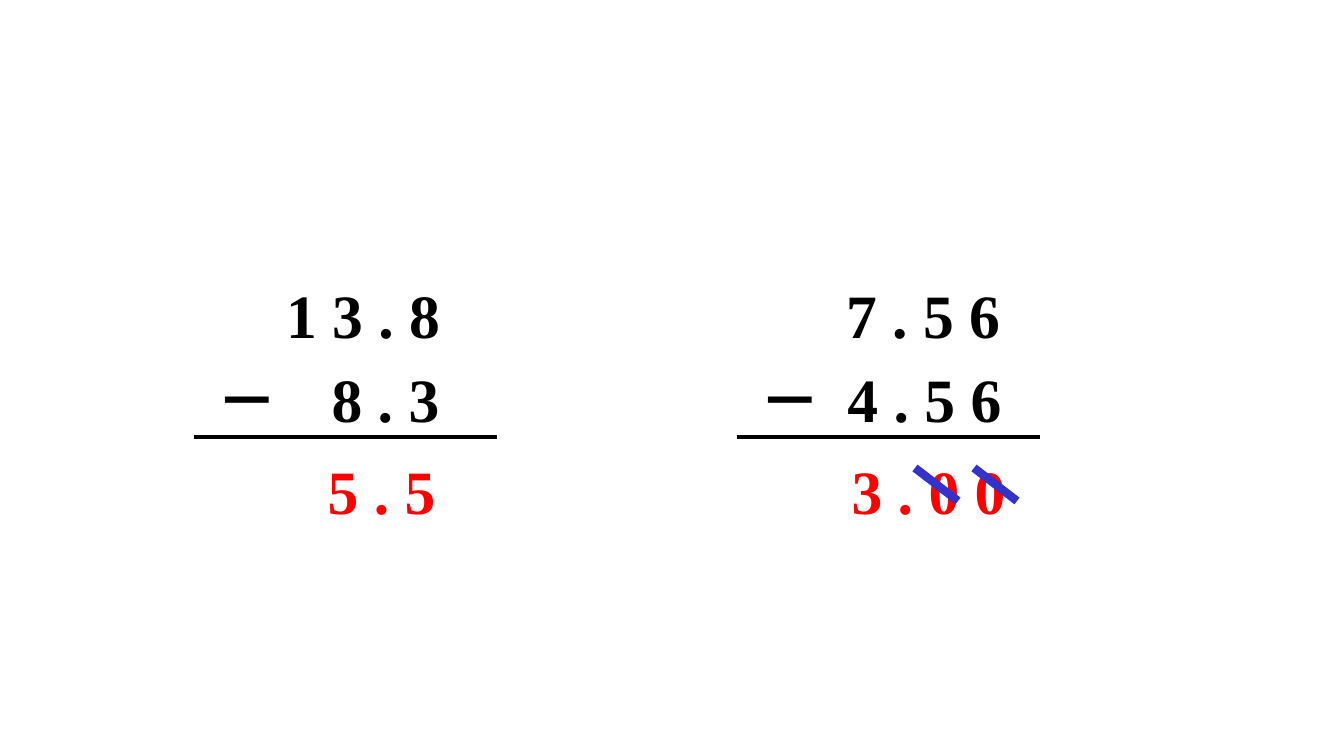
from lxml import etree
from pptx import Presentation
from pptx.dml.color import RGBColor
from pptx.enum.shapes import MSO_CONNECTOR
from pptx.enum.text import MSO_ANCHOR, PP_ALIGN
from pptx.oxml.ns import qn
from pptx.util import Emu, Pt

STRAIGHT = MSO_CONNECTOR.STRAIGHT
TOP = MSO_ANCHOR.TOP
CENTER = PP_ALIGN.CENTER

BLACK, RED, BLUE = "000000", "FF0000", "3333CC"
FONT = "Times New Roman"
ROW_HEIGHT = 89
RULE_WIDTH = 303


def px(length):
    return Emu(round(length * 914400 / 134.4))


def color(hex_value):
    return RGBColor.from_string(hex_value)


def add_number(slide, left, top, width, digits, ink=BLACK):
    number = slide.shapes.add_textbox(px(left), px(top), px(width), px(ROW_HEIGHT))
    frame = number.text_frame
    frame.word_wrap = True
    frame.vertical_anchor = TOP
    frame.margin_top = px(14)
    frame.margin_bottom = px(4)
    paragraph = frame.paragraphs[0]
    paragraph.alignment = CENTER
    run = paragraph.add_run()
    run.text = digits
    run.font.name = FONT
    run.font.size = Pt(33)
    run.font.bold = True
    run.font.color.rgb = color(ink)


def add_line(slide, left, top, width, height, ink, weight):
    line = slide.shapes.add_connector(
        STRAIGHT, px(left), px(top), px(left + width), px(top + height))
    line.line.color.rgb = color(ink)
    line.line.width = Pt(weight)
    etree.SubElement(line._element.spPr, qn("a:effectLst"))


def add_subtraction(slide, left, top, minuend, subtrahend, difference, strikes=()):
    rows = [
        (0, 188, minuend, BLACK),
        (84, 185, subtrahend, BLACK),
        (176, 261, difference, RED),
    ]
    for row_top, width, (offset, digits), ink in rows:
        add_number(slide, left + offset, top + row_top, width, digits, ink)
    add_number(slide, left - 39, top + 85, 185, "－")
    add_line(slide, left, top + 174, RULE_WIDTH, 0, BLACK, 2.25)
    for offset in strikes:
        add_line(slide, left + offset, top + 205, 43, 33, BLUE, 4.5)


def main():
    deck = Presentation()
    deck.slide_width = px(1344)
    deck.slide_height = px(756)
    slide = deck.slides.add_slide(deck.slide_layouts[6])
    add_subtraction(slide, 194, 263, (75, "1 3 . 8"), (99, "8 . 3"), (57, "5 . 5"))
    add_subtraction(slide, 737, 263, (92, "7 . 5 6"), (95, "4 . 5 6"),
                    (61, "3 . 0 0"), strikes=(178, 237))
    deck.save("out.pptx")


if __name__ == "__main__":
    main()
